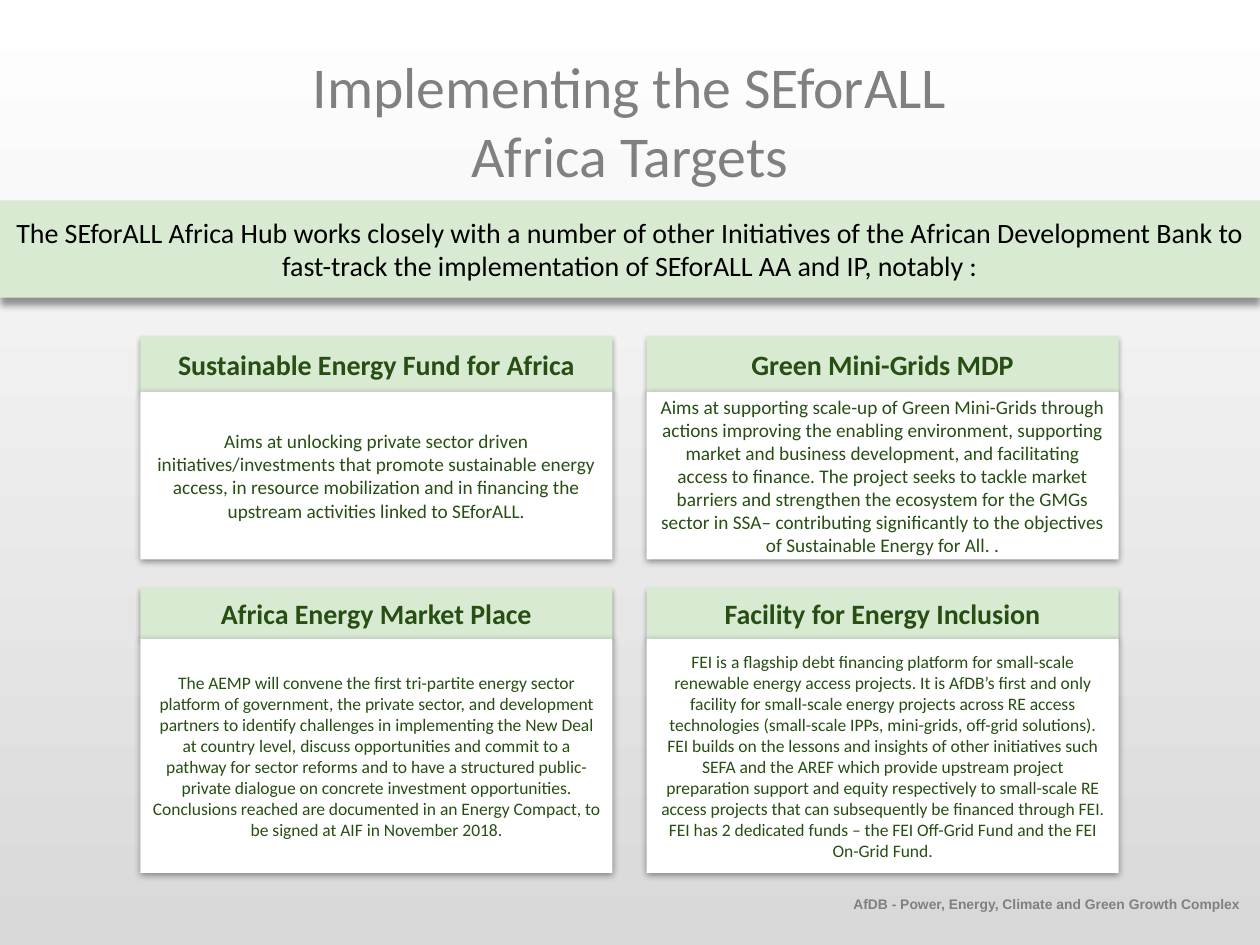
from lxml import etree
from pptx import Presentation
from pptx.dml.color import RGBColor
from pptx.enum.shapes import MSO_SHAPE as Shape
from pptx.enum.text import MSO_ANCHOR as Anchor, PP_ALIGN as Align
from pptx.oxml import parse_xml
from pptx.oxml.ns import nsdecls
from pptx.util import Cm, Pt

PALE, DARK, GREY = "D9EAD3", "274E13", "808080"

# Shadow blur, distance (points) and opacity (percent)
BAND_SHADOW = (4, 4, 40)
HEAD_SHADOW = (3.1, 1.8, 35)
BODY_SHADOW = (4, 1, 40)

ROWS = [
    # top, head height, body height, body size, cards
    (6.77, 1.13, 3.38, 11, [
        ("Sustainable Energy Fund for Africa",
         "Aims at unlocking private sector driven initiatives/investments that "
         "promote sustainable energy access, in resource mobilization and in "
         "financing the upstream activities linked to SEforALL."),
        ("Green Mini-Grids MDP",
         "Aims at supporting scale-up of Green Mini-Grids through actions "
         "improving the enabling environment, supporting market and business "
         "development, and facilitating access to finance. The project seeks to "
         "tackle market barriers and strengthen the ecosystem for the GMGs "
         "sector in SSA– contributing significantly to the objectives of "
         "Sustainable Energy for All. ."),
    ]),
    (11.84, 1.04, 4.72, 10, [
        ("Africa Energy Market Place",
         "The AEMP will convene the first tri-partite energy sector platform of "
         "government, the private sector, and development partners to identify "
         "challenges in implementing the New Deal at country level, discuss "
         "opportunities and commit to a pathway for sector reforms and to have "
         "a structured public-private dialogue on concrete investment "
         "opportunities. Conclusions reached are documented in an Energy "
         "Compact, to be signed at AIF in November 2018."),
        ("Facility for Energy Inclusion",
         "FEI is a flagship debt financing platform for small-scale renewable "
         "energy access projects. It is AfDB’s first and only facility for "
         "small-scale energy projects across RE access technologies "
         "(small-scale IPPs, mini-grids, off-grid solutions). FEI builds on the "
         "lessons and insights of other initiatives such SEFA and the AREF "
         "which provide upstream project preparation support and equity "
         "respectively to small-scale RE access projects that can subsequently "
         "be financed through FEI. FEI has 2 dedicated funds – the FEI Off-Grid "
         "Fund and the FEI On-Grid Fund."),
    ]),
]


def rgb(code):
    return RGBColor.from_string(code)


def write(frame, text, size, color, bold=False, font="Calibri", align=Align.CENTER):
    frame.text = text
    frame.word_wrap = True
    para = frame.paragraphs[0]
    para.alignment = align
    face = para.runs[0].font
    face.name, face.size, face.bold = font, Pt(size), bold
    face.color.rgb = rgb(color)


def cast(shape, blur, dist, alpha):
    """Give the shape a black shadow straight below it."""
    shape.shadow.inherit = False
    shape.element.spPr.remove(shape.element.spPr.find(
        "{http://schemas.openxmlformats.org/drawingml/2006/main}effectLst"))
    shape.element.spPr.append(parse_xml(
        f'<a:effectLst {nsdecls("a")}><a:outerShdw blurRad="{Pt(blur)}" '
        f'dist="{Pt(dist)}" dir="5400000" rotWithShape="0">'
        f'<a:srgbClr val="000000"><a:alpha val="{alpha * 1000}"/></a:srgbClr>'
        '</a:outerShdw></a:effectLst>'))


def panel(shapes, box, fill, shadow, text, size, color, bold=False):
    rect = shapes.add_shape(Shape.RECTANGLE, *map(Cm, box))
    rect.fill.solid()
    rect.fill.fore_color.rgb = rgb(fill)
    rect.line.fill.background()
    cast(rect, *shadow)
    rect.text_frame.vertical_anchor = Anchor.MIDDLE
    write(rect.text_frame, text, size, color, bold)
    return rect


def card(shapes, box, head, name, text, size):
    left, top, width, height = box
    panel(shapes, (left, top, width, head), PALE, HEAD_SHADOW, name, 16, DARK, True)
    panel(shapes, (left, top + head, width, height - head), "FFFFFF",
          BODY_SHADOW, text, size, DARK)


def card_row(slide, box, head, size, cards, gap=0.69):
    left, top, width, height = box
    group = slide.shapes.add_group_shape()
    wide = (width - gap * (len(cards) - 1)) / len(cards)
    for col, (name, text) in enumerate(cards):
        spot = (left + col * (wide + gap), top, wide, height)
        card(group.shapes, spot, head, name, text, size)


def backdrop(slide):
    fill = slide.background.fill
    fill.gradient()
    fill.gradient_angle = 270
    for stop, code in zip(fill.gradient_stops, ("FFFFFF", "D9D9D9")):
        stop.color.rgb = rgb(code)


def heading(slide, box):
    title = slide.shapes.title
    title.left, title.top, title.width, title.height = map(Cm, box)
    title.text_frame.vertical_anchor = Anchor.TOP
    write(title.text_frame, "Implementing the SEforALL Africa Targets", 33, GREY)


def banner(slide, box):
    band = panel(
        slide.shapes, box, PALE, BAND_SHADOW,
        "The SEforALL Africa Hub works closely with a number of other Initiatives "
        "of the African Development Bank to fast-track the implementation of "
        "SEforALL AA and IP, notably :", 16, "000000")
    band.text_frame.paragraphs[0].space_after = Pt(6)


def footer(slide, box):
    frame = slide.shapes.add_textbox(*map(Cm, box)).text_frame
    frame.margin_left = frame.margin_right = Cm(0.18)
    frame.margin_top = frame.margin_bottom = Cm(0.1)
    write(frame, "AfDB - Power, Energy, Climate and Green Growth Complex",
          7.9, GREY, True, "Arial", Align.RIGHT)


def main():
    deck = Presentation()
    deck.slide_width, deck.slide_height = Cm(25.4), Cm(19.05)
    slide = deck.slides.add_slide(deck.slide_layouts[5])
    backdrop(slide)
    footer(slide, (16.38, 17.96, 8.79, 0.64))
    heading(slide, (4.62, 0.89, 16.15, 2.69))
    banner(slide, (0, 4.04, 25.4, 1.96))
    for top, head, body, size, cards in ROWS:
        card_row(slide, (2.83, top, 19.72, head + body), head, size, cards)
    deck.save("out.pptx")


if __name__ == "__main__":
    main()
